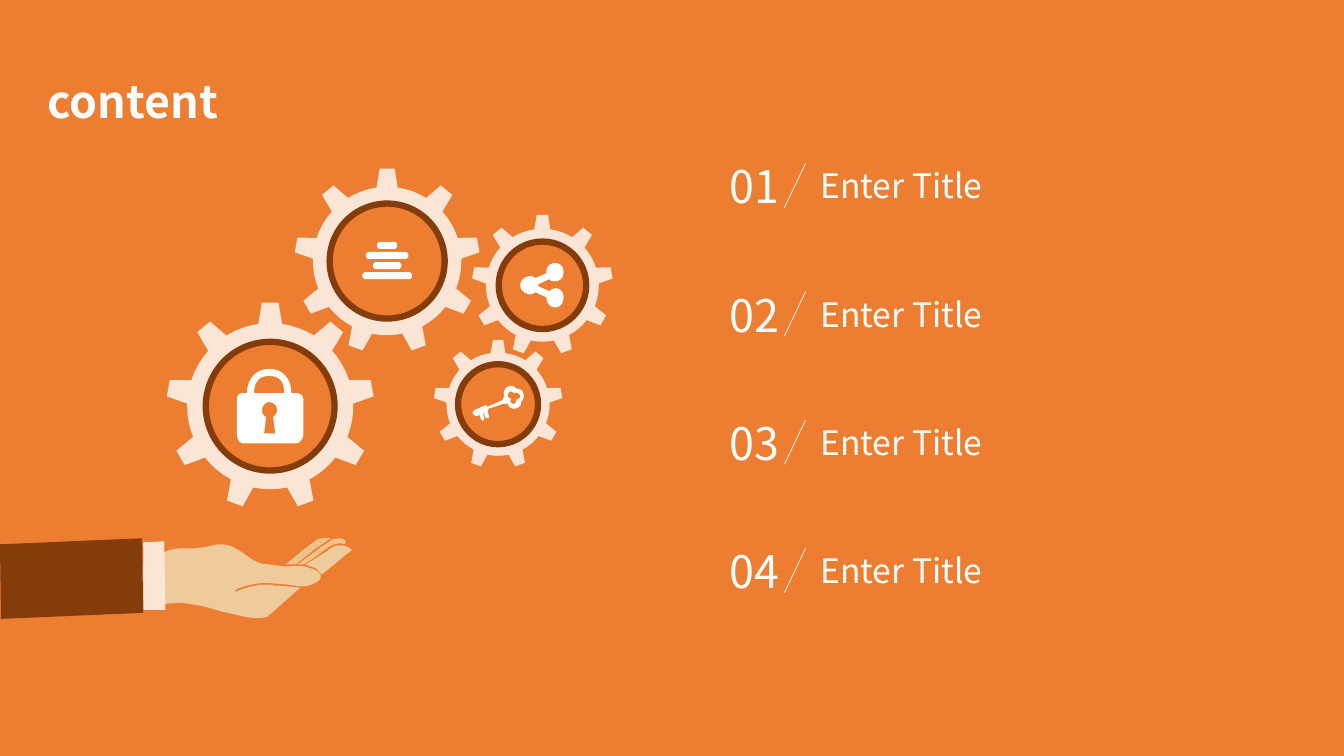
import math

import pptx
import pptx.dml.color
import pptx.enum.shapes
import pptx.enum.text
import pptx.oxml
from pptx.util import Inches

FONT = "Noto Sans CJK JP"
COLORS = {"orange": "ED7D31", "brown": "843C0B", "cream": "FBE5D6",
          "skin": "EFCB9B", "finger": "EDC38B", "white": "FFFFFF"}
TEETH = 9
FIRST_ROW, LAST_ROW = 1.57, 5.39
ENTRIES = ["Enter Title"] * 4

# Outlines in inches: M starts a contour, L adds corners, C adds Bézier curves.
HAND = [
    ("skin", """M 3.49 5.46 L 3.42 5.51 3.34 5.58 3.19 5.7 3.14 5.64 3.03 5.6 3.13 5.54 3.24 5.47
        C 3.28 5.44 3.32 5.41 3.36 5.41 3.41 5.41 3.46 5.42 3.49 5.46"""),
    ("finger", """M 3.43 5.37 L 3.42 5.4 3.38 5.39 C 3.33 5.39 3.28 5.41 3.24 5.44
        L 3.12 5.53 3.01 5.6 2.95 5.6 3.06 5.52 3.18 5.43 3.3 5.35 C 3.35 5.34 3.4 5.33 3.43 5.37"""),
    ("finger", """M 3.28 5.34 L 3.18 5.41 3.12 5.45 3.06 5.5 2.93 5.6 2.83 5.6 2.93 5.52 3.04 5.43
        3.15 5.35 C 3.19 5.34 3.24 5.33 3.28 5.34"""),
    ("skin", """M 2.72 5.81 L 2.68 5.8 2.58 5.8 2.54 5.81 C 2.47 5.82 2.41 5.84 2.34 5.87
        2.33 5.87 2.33 5.86 2.34 5.85 2.4 5.82 2.48 5.8 2.55 5.79 2.61 5.78 2.66 5.78 2.72 5.79
        L 2.75 5.79 2.92 5.81 C 2.97 5.82 3.04 5.82 3.09 5.8 3.13 5.78 3.19 5.76 3.18 5.71
        3.17 5.66 3.11 5.65 3.06 5.63 3 5.61 2.93 5.61 2.87 5.62 2.8 5.62 2.74 5.61 2.67 5.6
        2.61 5.6 2.55 5.58 2.5 5.55 2.4 5.48 2.31 5.4 2.19 5.4 2.14 5.4 2.08 5.42 2.02 5.43
        L 1.94 5.44 1.85 5.44 C 1.78 5.44 1.72 5.44 1.65 5.47 L 1.48 5.56 1.34 5.65 1.33 5.66
        1.4 6.06 1.45 6.03 C 1.5 6 1.74 5.98 1.8 5.98 L 2 6.01 2.21 6.07 2.43 6.12
        C 2.5 6.13 2.57 6.14 2.65 6.12 L 2.82 5.97 2.91 5.89 2.98 5.83 2.77 5.81"""),
    ("brown", "M 1.42 6.08 L 1.41 5.34 0 5.4 0.01 6.14"),
    ("cream", "M 1.42 5.38 L 1.43 6.05 1.64 6.05 1.63 5.37"),
]
PADLOCK = """M 2.93 3.9 L 2.89 3.9 C 2.89 3.75 2.8 3.66 2.67 3.66 2.55 3.66 2.45 3.75 2.45 3.9
    L 2.42 3.9 C 2.37 3.9 2.35 3.92 2.35 3.97 L 2.35 4.3 C 2.35 4.35 2.37 4.4 2.42 4.4
    L 2.93 4.4 C 2.98 4.4 3.01 4.35 3.01 4.3 L 3.01 3.97 C 3.01 3.92 2.98 3.9 2.93 3.9
    M 2.73 4.3 L 2.62 4.3 2.64 4.14 C 2.61 4.12 2.6 4.1 2.6 4.07 2.6 4.03 2.63 3.99 2.67 3.99
    2.71 3.99 2.75 4.02 2.75 4.07 2.75 4.09 2.73 4.12 2.71 4.14
    M 2.52 3.9 C 2.52 3.76 2.6 3.73 2.67 3.73 2.75 3.73 2.82 3.76 2.82 3.9"""
KEY = """M 4.93 3.82 C 4.91 3.85 4.92 3.89 4.95 3.92 L 4.96 3.92 4.95 3.94 4.96 3.96 4.87 4.1
    4.85 4.09 4.78 4.2 4.78 4.23 4.8 4.24 4.83 4.24 4.85 4.21 4.89 4.24 4.91 4.24 4.91 4.21
    4.87 4.18 4.87 4.17 4.92 4.2 4.94 4.19 4.94 4.17 4.9 4.14 4.9 4.13 4.89 4.11 4.99 3.98 5 3.98
    5.02 3.96 5.03 3.97 C 5.06 3.99 5.1 3.98 5.12 3.95 5.14 3.92 5.14 3.89 5.12 3.87
    5.13 3.84 5.12 3.81 5.09 3.79 5.07 3.77 5.03 3.77 5.01 3.79 4.98 3.78 4.95 3.79 4.93 3.82
    M 5.07 3.82 L 5.09 3.84 5.08 3.87 5.07 3.88 5.08 3.9 5.08 3.92 5.06 3.94 5.03 3.93 5.02 3.9
    5 3.91 4.98 3.9 4.97 3.88 4.97 3.85 4.99 3.84 5.02 3.84 5.02 3.83 5.04 3.82"""
SHARE = """M 5.59 2.95 C 5.59 3 5.56 3.05 5.51 3.05 5.45 3.05 5.42 3 5.42 2.95 L 5.31 2.9
    C 5.3 2.91 5.28 2.92 5.26 2.92 5.21 2.92 5.16 2.88 5.16 2.83 5.16 2.78 5.21 2.74 5.26 2.74
    5.28 2.74 5.3 2.75 5.31 2.76 L 5.42 2.71 5.42 2.7 C 5.42 2.65 5.45 2.61 5.51 2.61
    5.56 2.61 5.59 2.65 5.59 2.7 5.59 2.75 5.56 2.79 5.51 2.79 5.48 2.79 5.46 2.79 5.45 2.77
    L 5.34 2.82 5.34 2.84 5.45 2.89 C 5.46 2.88 5.48 2.86 5.51 2.86 5.56 2.86 5.59 2.9 5.59 2.95"""


def rgb(name):
    return pptx.dml.color.RGBColor.from_string(COLORS[name])


def flatten(outline, steps=8):
    """Turn an outline string into contours, each a list of points."""
    contours, command, numbers = [], "", []
    for token in outline.split():
        if token in "MLC":
            command = token
            continue
        numbers.append(float(token))
        if len(numbers) < (6 if command == "C" else 2):
            continue
        if command == "M":
            contours.append([])
        ends = [*contours[-1][-1:], *zip(numbers[::2], numbers[1::2])]
        if command != "C":
            contours[-1].append(ends[-1])
        else:
            for t in (step / steps for step in range(1, steps + 1)):
                weights = [math.comb(3, i) * t**i * (1 - t) ** (3 - i) for i in range(4)]
                contours[-1].append(tuple(
                    sum(w * end[axis] for w, end in zip(weights, ends)) for axis in (0, 1)))
        numbers = []
    return contours


def add_outline(slide, contours, color):
    contours = [[(Inches(x), Inches(y)) for x, y in contour] for contour in contours]
    builder = slide.shapes.build_freeform(*contours[0][0], scale=1.0)
    for contour in contours:
        if contour is not contours[0]:
            builder.move_to(*contour[0])
        builder.add_line_segments(contour[1:], close=True)
    shape = builder.convert_to_shape()
    shape.shadow.inherit = False
    shape.fill.solid()
    shape.fill.fore_color.rgb = rgb(color)
    shape.line.fill.background()
    return shape


def add_gear(slide, x, y, radius):
    """Add a toothed wheel with a ringed disc at its centre."""
    pitch = 360 / TEETH
    profile = [(-4.6, 1), (4.6, 1), *((angle, 0.8) for angle in (8.2, 14, 20, 26, pitch - 8.2))]
    points = [(math.radians(tooth * pitch + offset), radius * reach)
              for tooth in range(TEETH) for offset, reach in profile]
    add_outline(slide, [[(x + r * math.sin(a), y - r * math.cos(a)) for a, r in points]], "cream")
    hub = radius * 0.62
    disc = slide.shapes.add_shape(pptx.enum.shapes.MSO_SHAPE.OVAL, Inches(x - hub),
                                  Inches(y - hub), Inches(2 * hub), Inches(2 * hub))
    disc.shadow.inherit = False
    disc.fill.solid()
    disc.fill.fore_color.rgb = rgb("orange")
    disc.line.color.rgb = rgb("brown")
    disc.line.width = pptx.util.Pt(4.5)


def bar_stack(center, top, widths, height=0.07, pitch=0.1, clip=0.02):
    """Return contours of centred bars with clipped corners."""
    corners = [(-1, 0, 1, 0), (1, 0, -1, 0), (1, 0, 0, 1), (1, 1, 0, -1),
               (1, 1, -1, 0), (-1, 1, 1, 0), (-1, 1, 0, -1), (-1, 0, 0, 1)]
    return [[(center + side * width / 2 + dx * clip, top + row * pitch + low * height + dy * clip)
             for side, low, dx, dy in corners] for row, width in enumerate(widths)]


def write(frame, text, size, bold=False):
    frame.text = text
    paragraph = frame.paragraphs[0]
    paragraph.font.name = FONT
    paragraph.font.size = pptx.util.Pt(size)
    paragraph.font.bold = bold
    paragraph.font.color.rgb = rgb("white")
    return paragraph


def add_text(slide, x, y, width, height, text, size):
    box = slide.shapes.add_textbox(Inches(x), Inches(y), Inches(width), Inches(height))
    box.text_frame.word_wrap = False
    return box.text_frame, write(box.text_frame, text, size)


def add_entry(slide, number, top, title):
    x, width = (7.19, 0.58) if number == 1 else (7.23, 0.5)
    frame, paragraph = add_text(slide, x, top, width, 0.54, f"{number:02}", 32)
    frame.margin_left = frame.margin_right = frame.margin_top = frame.margin_bottom = 0
    frame.vertical_anchor = pptx.enum.text.MSO_ANCHOR.BOTTOM
    frame.auto_size = pptx.enum.text.MSO_AUTO_SIZE.SHAPE_TO_FIT_TEXT
    paragraph.alignment = pptx.enum.text.PP_ALIGN.CENTER
    paragraph.space_before = pptx.util.Pt(6.4)
    add_text(slide, 8.04, top + 0.02, 3.88, 0.51, title, 24)
    slash = slide.shapes.add_connector(pptx.enum.shapes.MSO_CONNECTOR.STRAIGHT, Inches(7.99),
                                       Inches(top + 0.05), Inches(7.78), Inches(top + 0.49))
    slash.line.color.rgb = rgb("white")
    slash.line.width = pptx.util.Pt(0.5)
    slash._element.spPr.append(pptx.oxml.parse_xml(
        '<a:effectLst xmlns:a="http://schemas.openxmlformats.org/drawingml/2006/main"/>'))


def add_title(slide, text):
    title = slide.shapes.title
    title.left, title.top = Inches(0.37), Inches(0.66)
    title.width, title.height = Inches(2.14), Inches(0.67)
    title.text_frame.auto_size = pptx.enum.text.MSO_AUTO_SIZE.NONE
    title.text_frame.vertical_anchor = pptx.enum.text.MSO_ANCHOR.MIDDLE
    write(title.text_frame, text, 32, bold=True).alignment = pptx.enum.text.PP_ALIGN.LEFT


def main():
    deck = pptx.Presentation()
    deck.slide_width, deck.slide_height = Inches(13.33), Inches(7.5)
    slide = deck.slides.add_slide(deck.slide_layouts[5])
    slide.background.fill.solid()
    slide.background.fill.fore_color.rgb = rgb("orange")
    add_title(slide, "content")
    pitch = (LAST_ROW - FIRST_ROW) / (len(ENTRIES) - 1)
    for index, entry in enumerate(ENTRIES):
        add_entry(slide, index + 1, FIRST_ROW + index * pitch, entry)
    for color, outline in HAND:
        add_outline(slide, flatten(outline), color)
    bars = bar_stack(3.84, 2.4, (0.2, 0.42, 0.28, 0.49))
    for x, y, radius, icon, turn in [(3.84, 2.59, 0.92, bars, 0),
                                     (2.68, 4.03, 1.03, flatten(PADLOCK), 0),
                                     (4.94, 4.01, 0.64, flatten(KEY), 33.7),
                                     (5.38, 2.83, 0.7, flatten(SHARE), 0)]:
        add_gear(slide, x, y, radius)
        add_outline(slide, icon, "white").rotation = turn
    deck.save("out.pptx")


if __name__ == "__main__":
    main()
